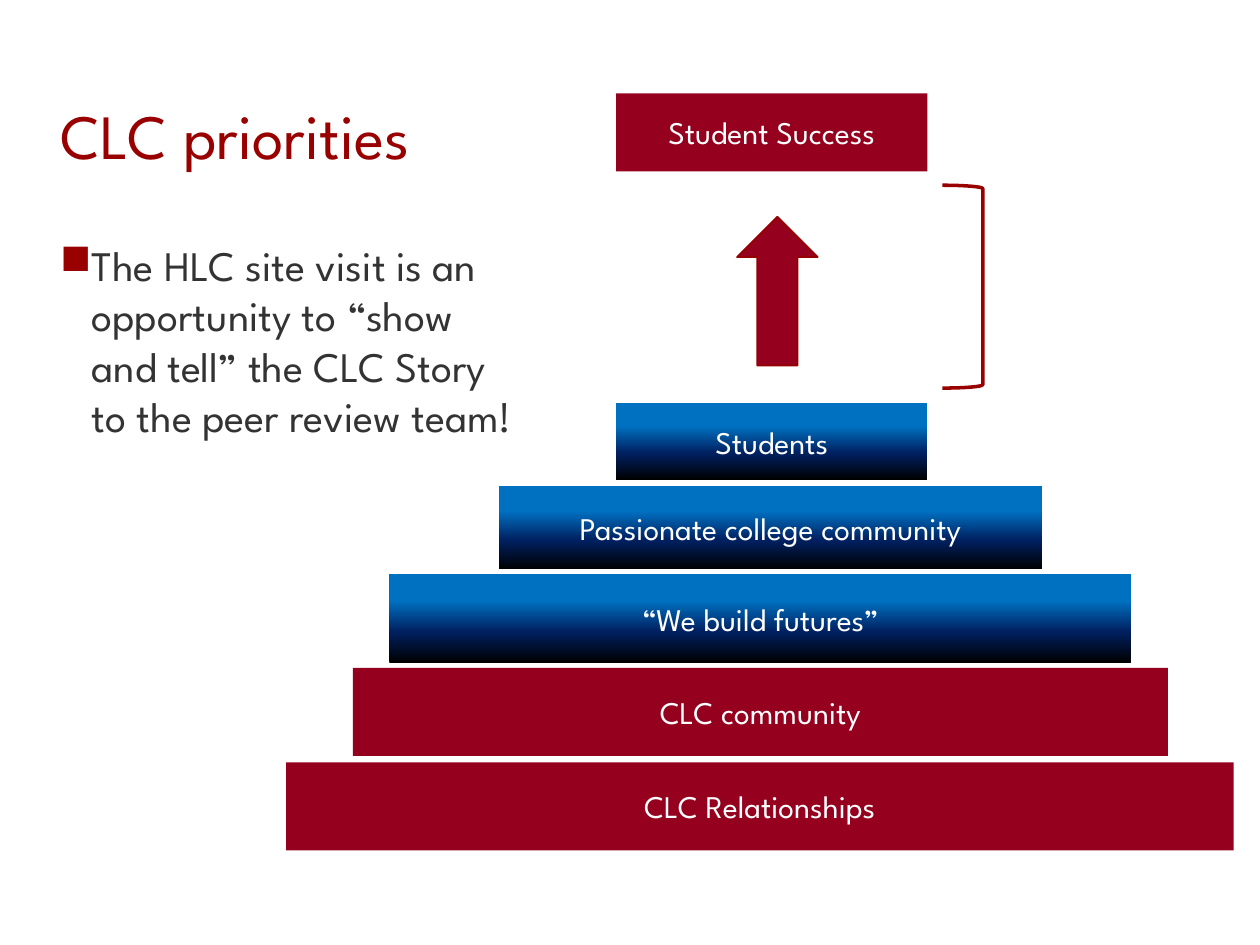
"""Build the CLC priorities slide with its pyramid of support."""
from lxml.etree import SubElement
from pptx import Presentation
from pptx.dml.color import RGBColor as Rgb
from pptx.enum.shapes import MSO_SHAPE as Kind
from pptx.enum.text import MSO_ANCHOR as Anchor, PP_ALIGN as Align
from pptx.oxml.ns import qn
from pptx.util import Inches, Pt

HUES = {"red": "990000", "wine": "96001F", "edge": "960000", "text": "333333",
        "white": "FFFFFF", "black": "000000", "navy": "002060", "blue": "0070C0"}
FADE = [(0, "black"), (35, "navy"), (70, "blue"), (100, "blue")]
STEPS = [
    ("Student Success", "wine", (4.89, 0.74, 2.47, 0.62)),
    ("Students", "fade", (4.89, 3.2, 2.47, 0.61)),
    ("Passionate college community", "fade", (3.96, 3.86, 4.31, 0.66)),
    ("“We build futures”", "fade", (3.09, 4.56, 5.89, 0.7)),
    ("CLC community", "wine", (2.8, 5.3, 6.47, 0.7)),
    ("CLC Relationships", "wine", (2.27, 6.05, 7.52, 0.7)),
]


class Deck:
    """Hold the style and the current slide."""

    def __init__(self, face):
        self.face = face
        self.show = Presentation()
        self.show.slide_width, self.show.slide_height = Inches(10), Inches(7.5)
        self.slide = self.show.slides.add_slide(self.show.slide_layouts[5])

    def hue(self, name):
        return Rgb.from_string(HUES[name])

    def label(self, frame, text, size, hue, align, anchor):
        for key, val in {"word_wrap": True, "vertical_anchor": anchor}.items():
            setattr(frame, key, val)
        para = frame.paragraphs[0]
        para.text, para.alignment = text, align
        font = para.runs[0].font
        for key, val in {"name": self.face, "size": Pt(size)}.items():
            setattr(font, key, val)
        font.color.rgb = self.hue(hue)

    def title(self, text, box):
        head = self.slide.shapes.title
        for key, val in zip(("left", "top", "width", "height"), box):
            setattr(head, key, Inches(val))
        self.label(head.text_frame, text, 36, "red", Align.LEFT, Anchor.BOTTOM)

    def bullet(self, text, box):
        frame = self.slide.shapes.add_textbox(*map(Inches, box)).text_frame
        props = frame.paragraphs[0]._p.get_or_add_pPr()
        props.set("marL", str(Inches(0.25)))
        props.set("indent", str(-Inches(0.25)))
        tint = SubElement(props, qn("a:buClr"))
        SubElement(tint, qn("a:srgbClr"), val=HUES["red"])
        SubElement(props, qn("a:buChar"), char="■")
        self.label(frame, text, 24, "text", Align.LEFT, Anchor.TOP)

    def fade(self, item):
        item.fill.gradient()
        item.fill.gradient_angle = 90
        stops = item._element.spPr.find(qn("a:gradFill")).find(qn("a:gsLst"))
        for stop in list(stops):
            stops.remove(stop)
        for pos, name in FADE:
            stop = SubElement(stops, qn("a:gs"), pos=str(pos * 1000))
            SubElement(stop, qn("a:srgbClr"), val=HUES[name])

    def shape(self, kind, box, fill=None, line=None, width=1):
        item = self.slide.shapes.add_shape(kind, *map(Inches, box))
        item.shadow.inherit = False
        if fill == "fade":
            self.fade(item)
        elif fill:
            item.fill.solid()
            item.fill.fore_color.rgb = self.hue(fill)
        else:
            item.fill.background()
        if line:
            item.line.color.rgb, item.line.width = self.hue(line), Pt(width)
        else:
            item.line.fill.background()
        return item

    def step(self, text, fill, box):
        item = self.shape(Kind.RECTANGLE, box, fill)
        self.label(item.text_frame, text, 18, "white", Align.CENTER, Anchor.MIDDLE)


def main():
    deck = Deck("League Spartan")
    deck.title("CLC priorities", (0.38, 0.17, 8.08, 1.25))
    deck.bullet("The HLC site visit is an opportunity to “show and tell” "
                "the CLC Story to the peer review team!", (0.38, 1.85, 3.9, 4.28))
    for step in STEPS:
        deck.step(*step)
    deck.shape(Kind.RIGHT_BRACKET, (7.48, 1.47, 0.32, 1.61), line="red", width=2)
    deck.shape(Kind.UP_ARROW, (5.85, 1.72, 0.64, 1.18), "wine", "edge")
    deck.show.save("out.pptx")


if __name__ == "__main__":
    main()
